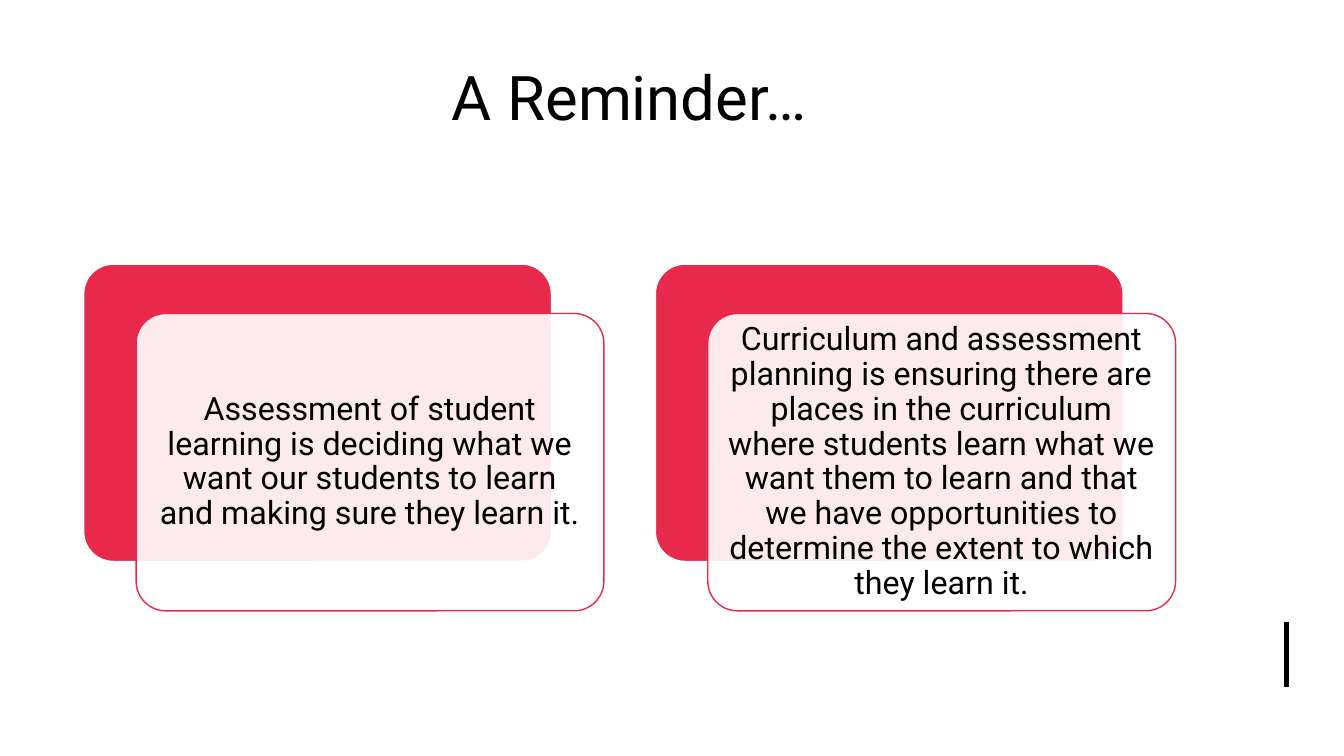
from lxml import etree
from pptx import Presentation
from pptx.dml.color import RGBColor
from pptx.enum import shapes, text
from pptx.oxml.ns import qn
from pptx.util import Inches, Pt

BLACK = RGBColor(0x00, 0x00, 0x00)
WHITE = RGBColor(0xFF, 0xFF, 0xFF)
RED = RGBColor(0xE7, 0x29, 0x4C)

CARD_WIDTH, CARD_HEIGHT = 4.64, 2.95
FIRST_LEFT, CARD_TOP, CARD_PITCH = 0.83, 2.62, 5.67
OFFSET_X, OFFSET_Y = 0.52, 0.49

REMINDERS = [
    "Assessment of student learning is deciding what we want our students "
    "to learn and making sure they learn it.",
    "Curriculum and assessment planning is ensuring there are places in the "
    "curriculum where students learn what we want them to learn and that we "
    "have opportunities to determine the extent to which they learn it.",
]


def write(shape, words, size, inset=0.1, line_spacing=1.0):
    frame = shape.text_frame
    frame.word_wrap = True
    frame.auto_size = text.MSO_AUTO_SIZE.NONE
    frame.vertical_anchor = text.MSO_ANCHOR.MIDDLE
    frame.margin_left = frame.margin_right = Inches(inset)
    frame.margin_top = frame.margin_bottom = Inches(inset)
    paragraph = frame.paragraphs[0]
    paragraph.alignment = text.PP_ALIGN.CENTER
    paragraph.line_spacing = line_spacing
    run = paragraph.add_run()
    run.text = words
    run.font.name = "Roboto"
    run.font.size = Pt(size)
    run.font.color.rgb = BLACK


def add_card(left, top, fill, line):
    card = slide.shapes.add_shape(
        shapes.MSO_SHAPE.ROUNDED_RECTANGLE,
        Inches(left), Inches(top), Inches(CARD_WIDTH), Inches(CARD_HEIGHT))
    card.adjustments[0] = 0.1
    card.shadow.inherit = False
    card.fill.solid()
    card.fill.fore_color.rgb = fill
    card.line.color.rgb = line
    card.line.width = Pt(1)
    return card


prs = Presentation()
prs.slide_width, prs.slide_height = Inches(13.33), Inches(7.5)
slide = prs.slides.add_slide(prs.slide_layouts[5])
slide.background.fill.solid()
slide.background.fill.fore_color.rgb = WHITE

title = slide.shapes.title
title.left, title.top = Inches(0.83), Inches(0.32)
title.width, title.height = Inches(10.83), Inches(1.27)
write(title, "A Reminder…", 44)

accent = slide.shapes.add_connector(
    shapes.MSO_CONNECTOR.STRAIGHT,
    Inches(12.76), Inches(6.17), Inches(12.76), Inches(6.82))
accent.line.color.rgb = BLACK
accent.line.width = Pt(3)
etree.SubElement(accent._element.spPr, qn("a:effectLst"))

for index, reminder in enumerate(REMINDERS):
    left = FIRST_LEFT + index * CARD_PITCH
    add_card(left, CARD_TOP, RED, WHITE)
    front = add_card(left + OFFSET_X, CARD_TOP + OFFSET_Y, WHITE, RED)
    white_fill = front._element.spPr.find(qn("a:solidFill")).find(qn("a:srgbClr"))
    etree.SubElement(white_fill, qn("a:alpha"), val="90000")
    write(front, reminder, 23, line_spacing=0.9)

prs.save("out.pptx")
